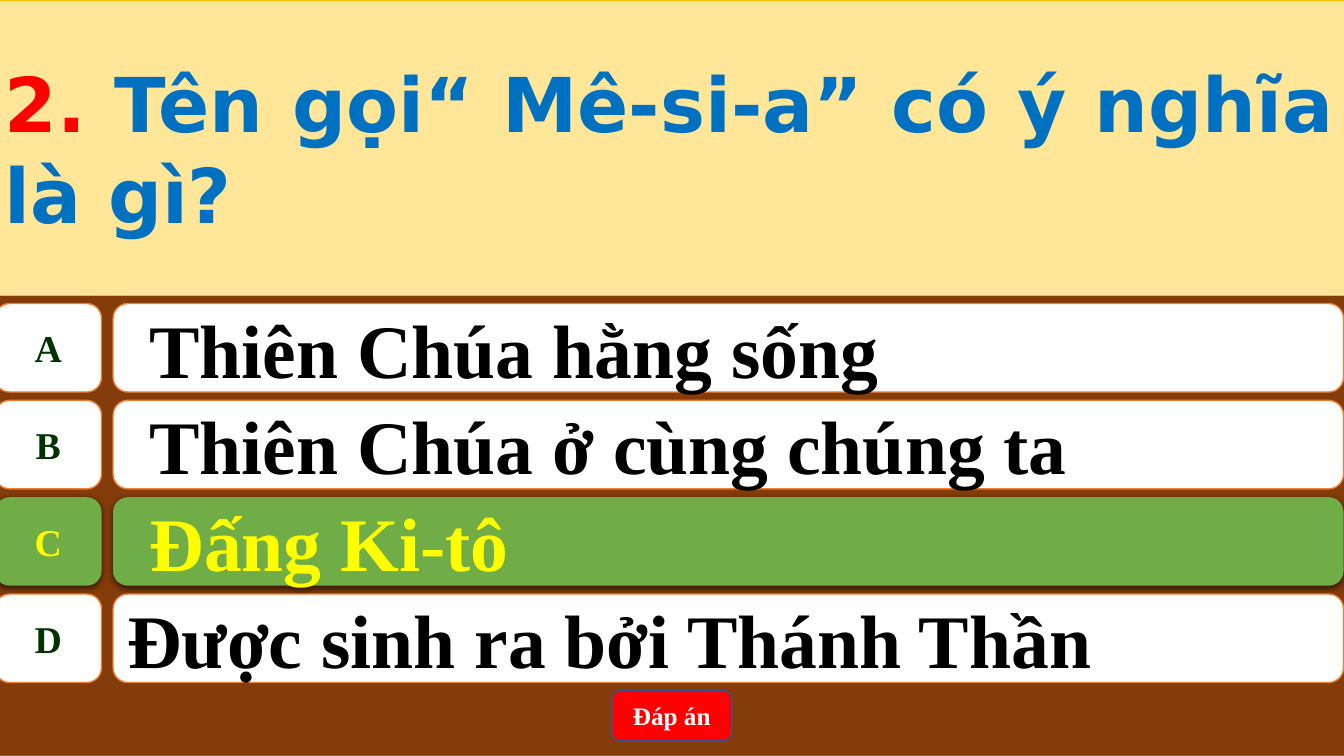
from dataclasses import dataclass

from lxml import etree
from pptx import Presentation
from pptx import util as u
from pptx.dml.color import RGBColor
from pptx.enum import shapes, text
from pptx.oxml.ns import qn


@dataclass(frozen=True)
class Theme:
    brown: str = "843C0B"
    backdrop_edge: str = "43739E"
    cream: str = "FFE699"
    gold: str = "FFC000"
    white: str = "FFFFFF"
    orange: str = "ED7D31"
    green: str = "70AD47"
    yellow: str = "FFFF00"
    dark_green: str = "003300"
    black: str = "000000"
    red: str = "FF0000"
    blue: str = "0070C0"
    button_edge: str = "325491"
    question_font: str = "DejaVu Sans"
    answer_font: str = "Times New Roman"
    large: int = 54
    letter: int = 27
    button: int = 18


THEME = Theme()
KIND = shapes.MSO_SHAPE
ALIGN = text.PP_ALIGN

LEFT, FULL_WIDTH = -0.13, 34.01
FIRST_ROW, ROW_STEP, ROW_HEIGHT = 7.65, 2.44, 2.23

# Letter, answer, whether it is the right one, whether it is indented
ANSWERS = [
    ("A", "Thiên Chúa hằng sống", False, True),
    ("B", "Thiên Chúa ở cùng chúng ta", False, True),
    ("C", "Đấng Ki-tô", True, True),
    ("D", "Được sinh ra bởi Thánh Thần", False, False),
]


def paint(shape, fill, edge=None, edge_width=1):
    shape.fill.solid()
    shape.fill.fore_color.rgb = RGBColor.from_string(fill)
    if edge:
        shape.line.color.rgb = RGBColor.from_string(edge)
        shape.line.width = u.Pt(edge_width)
    else:
        shape.line.fill.background()


def add_box(parent, kind, place, fill, edge=None):
    box = parent.add_shape(kind, *(u.Cm(length) for length in place))
    box.shadow.inherit = False
    paint(box, fill, edge)
    return box


def style_run(run, font, size, color):
    run.font.name = font
    run.font.size = u.Pt(size)
    run.font.bold = True
    run.font.color.rgb = RGBColor.from_string(color)


def write(box, words, size, color, align=ALIGN.CENTER, wrap=True):
    frame = box.text_frame
    frame.text = words
    frame.word_wrap = wrap
    frame.vertical_anchor = text.MSO_ANCHOR.MIDDLE
    line = frame.paragraphs[0]
    line.alignment = align
    style_run(line.runs[0], THEME.answer_font, size, color)


def indent(box):
    margins = box.text_frame.paragraphs[0]._p.get_or_add_pPr()
    margins.set("marL", str(u.Cm(1.27)))
    margins.set("indent", str(u.Cm(-0.71)))


def cast_shadow(box):
    effects = box._element.spPr.find(qn("a:effectLst"))
    shadow = etree.SubElement(
        effects, qn("a:outerShdw"), blurRad=str(u.Pt(4.5)),
        dist=str(u.Pt(1.5)), dir="5400000", algn="ctr", rotWithShape="0")
    color = etree.SubElement(shadow, qn("a:srgbClr"), val=THEME.black)
    etree.SubElement(color, qn("a:alpha"), val="63000")


def add_question(slide):
    question = slide.shapes.title
    # Bring the question in front of the backdrop
    slide.shapes._spTree.append(question._element)
    question.left, question.top = u.Cm(LEFT), u.Cm(0)
    question.width, question.height = u.Cm(FULL_WIDTH), u.Cm(7.44)
    paint(question, THEME.cream, THEME.gold, 0.5)
    frame = question.text_frame
    frame.word_wrap = True
    frame.auto_size = text.MSO_AUTO_SIZE.NONE
    frame.vertical_anchor = text.MSO_ANCHOR.MIDDLE
    line = frame.paragraphs[0]
    line.alignment = ALIGN.JUSTIFY
    for words, color in (("2. ", THEME.red),
                         ("Tên gọi“ Mê-si-a” có ý nghĩa là gì?", THEME.blue)):
        run = line.add_run()
        run.text = words
        style_run(run, THEME.question_font, THEME.large, color)


def add_answer(slide, row, letter, words, correct, indented):
    top = FIRST_ROW + row * ROW_STEP
    fill, edge = (THEME.green, None) if correct else (THEME.white, THEME.orange)
    letter_color = THEME.yellow if correct else THEME.dark_green
    answer_color = THEME.yellow if correct else THEME.black

    pair = slide.shapes.add_group_shape().shapes
    badge = add_box(pair, KIND.FLOWCHART_ALTERNATE_PROCESS,
                    (LEFT, top, 2.69, ROW_HEIGHT), fill, edge)
    write(badge, letter, THEME.letter, letter_color, wrap=False)
    answer = add_box(pair, KIND.ROUNDED_RECTANGLE,
                     (2.85, top, 31.01, ROW_HEIGHT), fill, edge)
    write(answer, words, THEME.large, answer_color, ALIGN.LEFT)
    if indented:
        indent(answer)
    if correct:
        cast_shadow(badge)
        cast_shadow(answer)


def main():
    deck = Presentation()
    deck.slide_width, deck.slide_height = u.Cm(33.87), u.Cm(19.05)
    slide = deck.slides.add_slide(deck.slide_layouts[5])

    # Backdrop and question
    add_box(slide.shapes, KIND.RECTANGLE, (LEFT, 0, FULL_WIDTH, 19.05),
            THEME.brown, THEME.backdrop_edge)
    add_question(slide)

    # Answers
    for row, answer in enumerate(ANSWERS):
        add_answer(slide, row, *answer)

    # Button that reveals the answer
    reveal = add_box(slide.shapes, KIND.ROUNDED_RECTANGLE,
                     (15.42, 17.4, 3.02, 1.27), THEME.red, THEME.button_edge)
    write(reveal, "Đáp án", THEME.button, THEME.white)

    deck.save("out.pptx")


if __name__ == "__main__":
    main()
